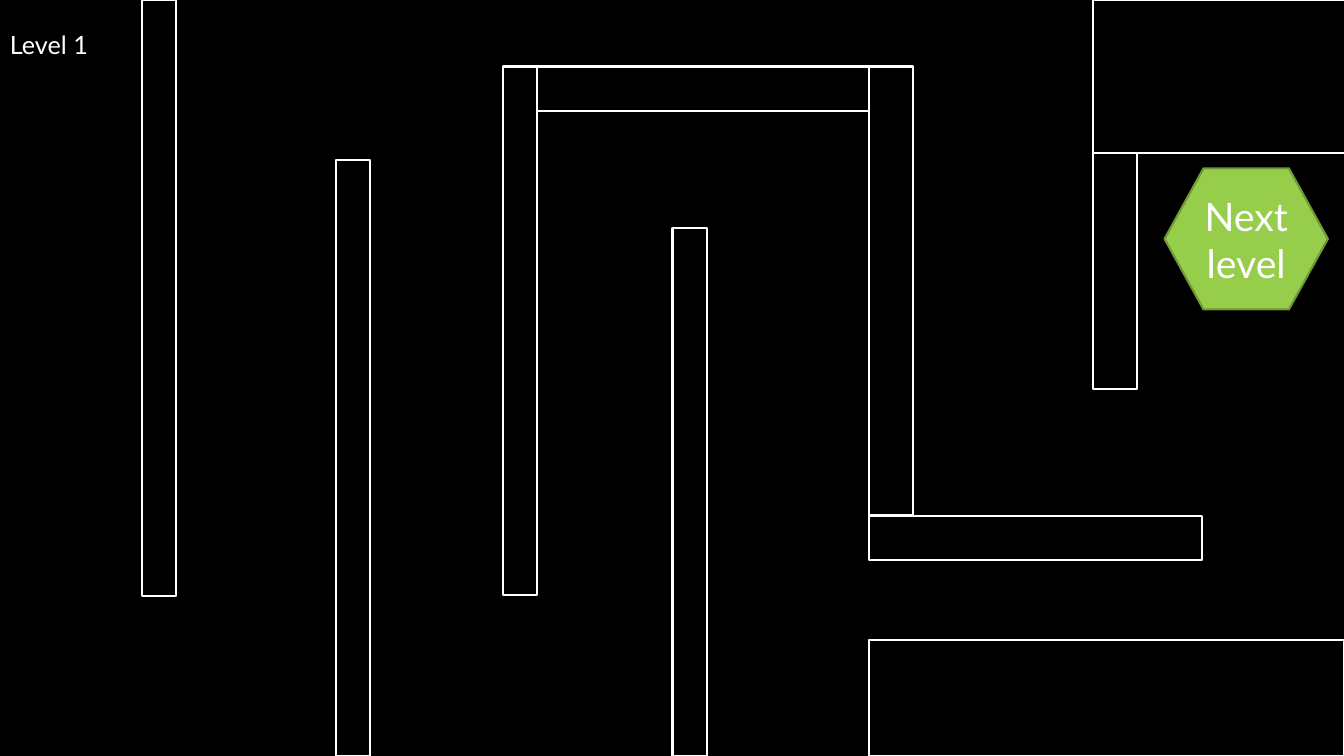
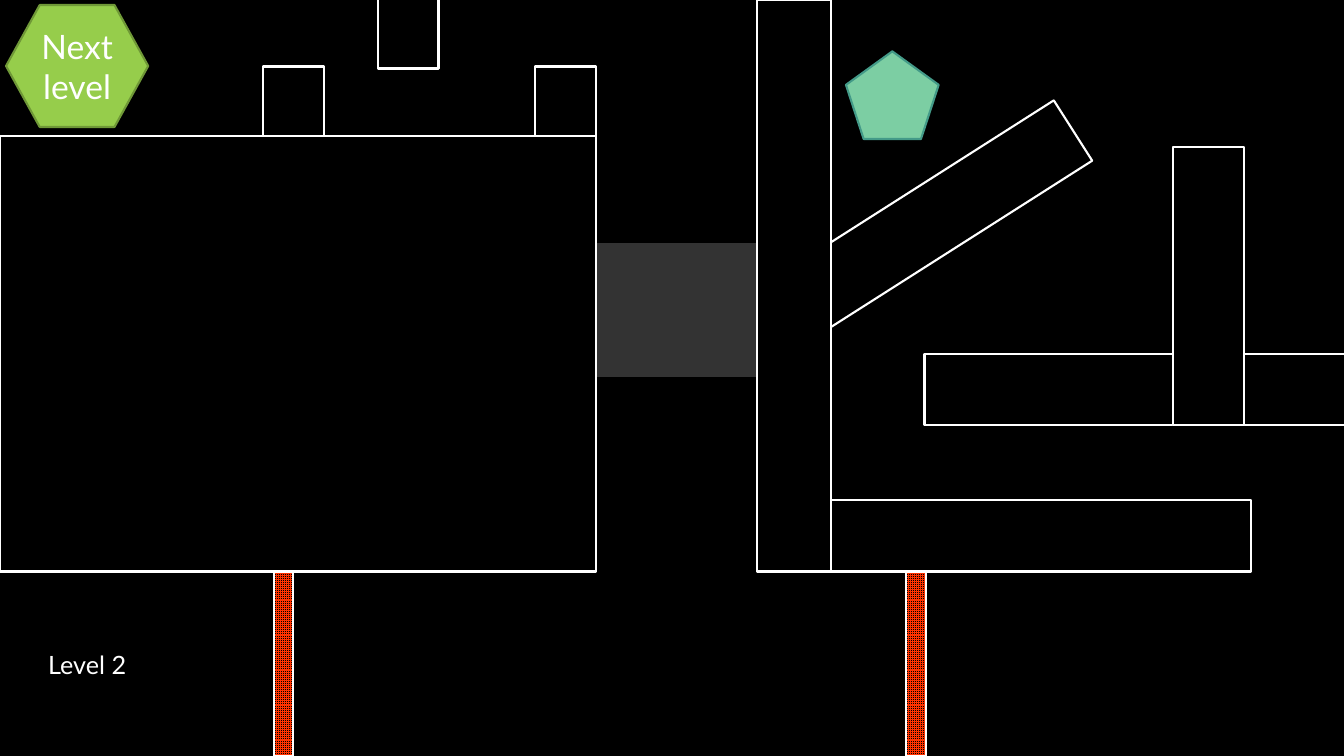
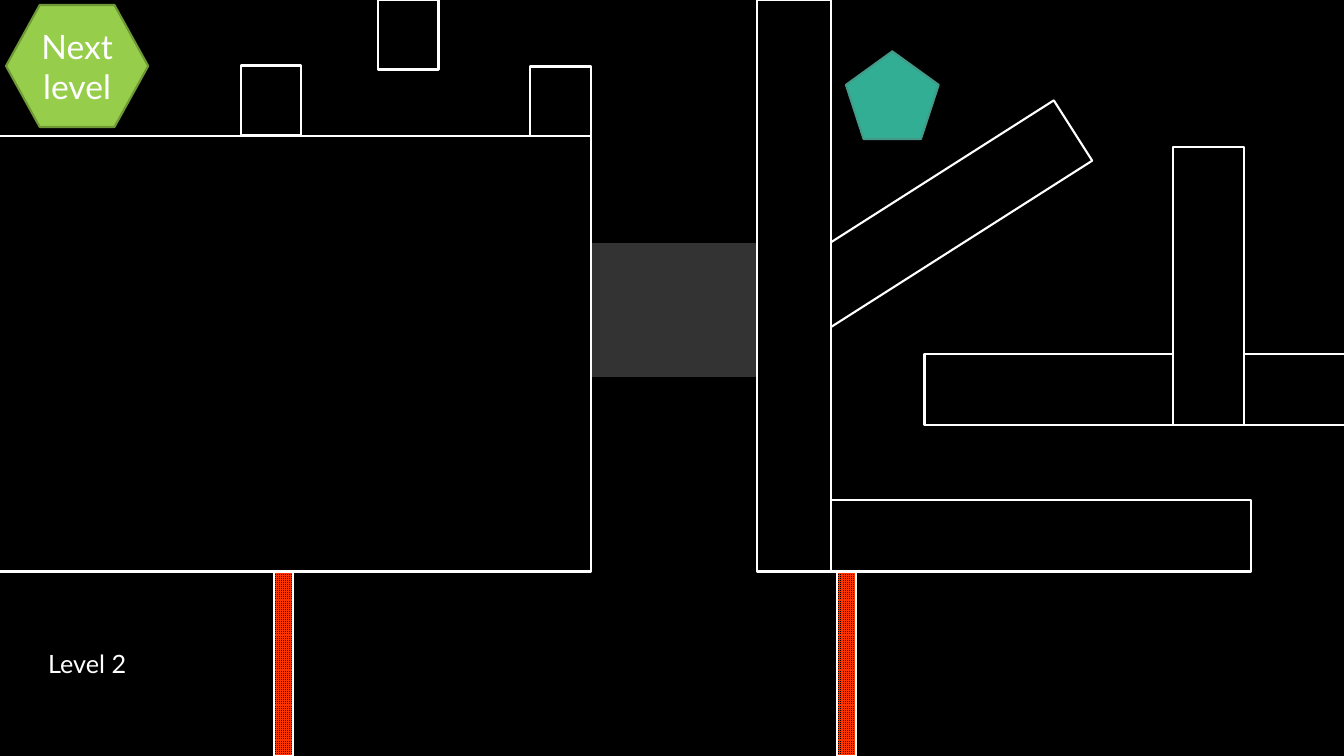
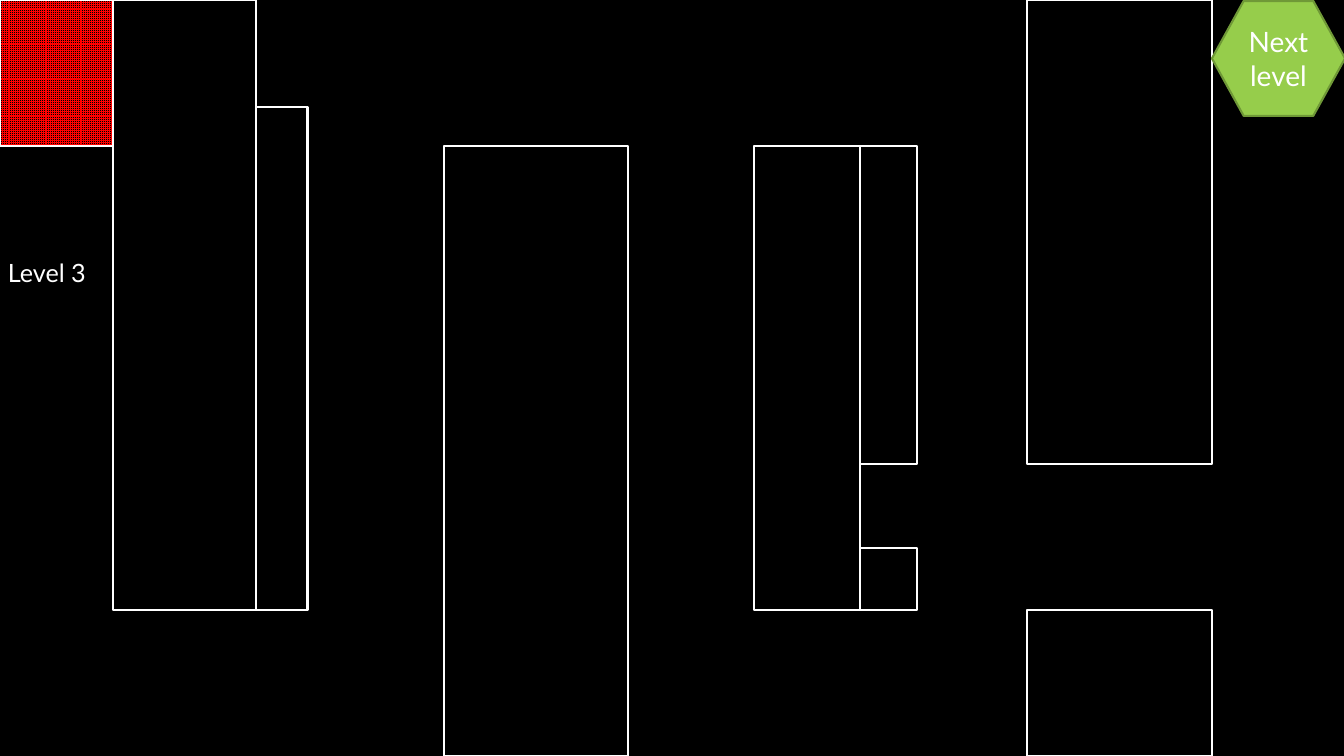
import pptx
import pptx.dml.color
import pptx.enum.dml
import pptx.enum.shapes
import pptx.enum.text
import pptx.util

Inches = pptx.util.Inches
Pt = pptx.util.Pt
RGBColor = pptx.dml.color.RGBColor
Shape = pptx.enum.shapes.MSO_SHAPE

BLACK = RGBColor(0x00, 0x00, 0x00)
WHITE = RGBColor(0xFF, 0xFF, 0xFF)
DARK_GREY = RGBColor(0x33, 0x33, 0x33)
ORANGE = RGBColor(0xFF, 0x33, 0x00)
RED = RGBColor(0xFF, 0x00, 0x00)
GREEN = RGBColor(0x96, 0xCD, 0x4B)
GREEN_EDGE = RGBColor(0x6F, 0x98, 0x37)
MINT = RGBColor(0x7C, 0xCE, 0xA3)
TEAL = RGBColor(0x32, 0xAE, 0x95)
TEAL_EDGE = RGBColor(0x43, 0x9A, 0x88)

FONT = "Lato"
LABEL_SIZE = (1.3, 0.4)
PENTAGON_BOX = (8.39, 0.51, 0.92, 0.87)
PASSAGE_BOX = (5.69, 2.4, 2.1, 1.35)
RAMP_BOX, RAMP_ANGLE = (8.82, 0.49, 0.71, 3.48), 57.5
GATE_TOP, GATE_SIZE = 5.67, (0.19, 1.83)
BLOCK_SIZE = (0.6, 0.69)

# Boxes are (left, top, width, height) in inches.
LEVEL_1_WALLS = [
    (1.41, 0, 0.34, 5.91),
    (3.33, 1.59, 0.34, 5.91),
    (4.99, 0.66, 0.34, 5.24),
    (6.67, 2.26, 0.34, 5.24),
    (10.84, 0, 2.5, 1.52),
    (5.33, 0.66, 3.3, 0.44),
    (8.62, 0.66, 0.44, 4.45),
    (10.84, 1.52, 0.44, 2.34),
    (8.62, 5.12, 3.3, 0.44),
    (8.62, 6.35, 4.71, 1.15),
]
LEVEL_2_WALLS = [
    (7.51, 0, 0.73, 5.67),
    (8.24, 4.96, 4.17, 0.71),
    (9.17, 3.51, 4.17, 0.71),
    (11.63, 1.46, 0.71, 2.76),
]
LEVEL_2_VARIANTS = [
    {
        "pentagon": MINT,
        "room": (0, 1.35, 5.91, 4.32),
        "blocks": [(5.31, 0.66), (3.75, -0.01), (2.61, 0.66)],
        "gates": [2.72, 8.99],
        "label": (0.38, 6.39),
    },
    {
        "pentagon": TEAL,
        "room": (-0.05, 1.35, 5.91, 4.32),
        "blocks": [(5.26, 0.66), (3.75, 0), (2.39, 0.65)],
        "gates": [2.72, 8.3],
        "label": (0.38, 6.38),
    },
]
LEVEL_3_WALLS = [
    (1.12, 0, 1.42, 6.05),
    (4.4, 1.45, 1.83, 6.05),
    (7.48, 1.45, 1.05, 4.6),
    (10.19, 0, 1.83, 4.6),
    (10.19, 6.05, 1.83, 1.45),
    (2.54, 1.06, 0.51, 4.99),
    (8.53, 5.44, 0.57, 0.61),
    (8.53, 1.45, 0.57, 3.15),
]


def add_outlined(slide, box, fill=BLACK, line=WHITE, kind=Shape.RECTANGLE):
    shape = slide.shapes.add_shape(kind, *map(Inches, box))
    shape.shadow.inherit = False
    shape.fill.solid()
    shape.fill.fore_color.rgb = fill
    shape.line.color.rgb = line
    shape.line.width = Pt(1.5)
    return shape


def add_walls(slide, boxes):
    for box in boxes:
        add_outlined(slide, box)


def add_hazard(slide, box, color):
    """Add a deadly zone, drawn as a coloured grid pattern."""
    hazard = add_outlined(slide, box)
    hazard.fill.patterned()
    hazard.fill.pattern = pptx.enum.dml.MSO_PATTERN.SMALL_GRID
    hazard.fill.fore_color.rgb = color
    hazard.fill.back_color.rgb = BLACK


def write(shape, text, size):
    paragraph = shape.text_frame.paragraphs[0]
    paragraph.text = text
    font = paragraph.runs[0].font
    font.name = FONT
    font.size = Pt(size)
    font.color.rgb = WHITE
    return paragraph


def add_goal(slide, box, size):
    """Add the hexagon that ends the level."""
    goal = add_outlined(slide, box, GREEN, GREEN_EDGE, Shape.HEXAGON)
    goal.adjustments[0] = 0.276
    goal.text_frame.word_wrap = True
    goal.text_frame.vertical_anchor = pptx.enum.text.MSO_ANCHOR.MIDDLE
    paragraph = write(goal, "Next level", size)
    paragraph.alignment = pptx.enum.text.PP_ALIGN.CENTER


def add_label(slide, position, text):
    label = slide.shapes.add_textbox(*map(Inches, position + LABEL_SIZE))
    label.text_frame.word_wrap = True
    label.text_frame.auto_size = pptx.enum.text.MSO_AUTO_SIZE.SHAPE_TO_FIT_TEXT
    write(label, text, 18)


def build_level_1(slide):
    add_walls(slide, LEVEL_1_WALLS)
    add_goal(slide, (11.55, 1.67, 1.62, 1.4), 28)
    add_label(slide, (0, 0.24), "Level 1")


def build_level_2(slide, variant):
    add_outlined(slide, PASSAGE_BOX, DARK_GREY, BLACK)
    add_outlined(slide, RAMP_BOX).rotation = RAMP_ANGLE
    add_walls(slide, [variant["room"]] + LEVEL_2_WALLS)
    for left in variant["gates"]:
        add_hazard(slide, (left, GATE_TOP) + GATE_SIZE, ORANGE)
    add_outlined(slide, PENTAGON_BOX, variant["pentagon"], TEAL_EDGE,
                 Shape.REGULAR_PENTAGON)
    add_walls(slide, [position + BLOCK_SIZE for position in variant["blocks"]])
    add_goal(slide, (0.06, 0.05, 1.41, 1.21), 24)
    add_label(slide, variant["label"], "Level 2")


def build_level_3(slide):
    add_walls(slide, LEVEL_3_WALLS)
    add_label(slide, (-0.02, 2.5), "Level 3")
    add_goal(slide, (12.02, 0.01, 1.32, 1.14), 20)
    add_hazard(slide, (0, 0, 1.12, 1.45), RED)


def main():
    presentation = pptx.Presentation()
    presentation.slide_width = Inches(13.33)
    presentation.slide_height = Inches(7.5)
    background = presentation.slide_master.background.fill
    background.solid()
    background.fore_color.rgb = BLACK
    blank = presentation.slide_layouts[6]

    build_level_1(presentation.slides.add_slide(blank))
    for variant in LEVEL_2_VARIANTS:
        build_level_2(presentation.slides.add_slide(blank), variant)
    build_level_3(presentation.slides.add_slide(blank))
    presentation.save("out.pptx")


if __name__ == "__main__":
    main()
